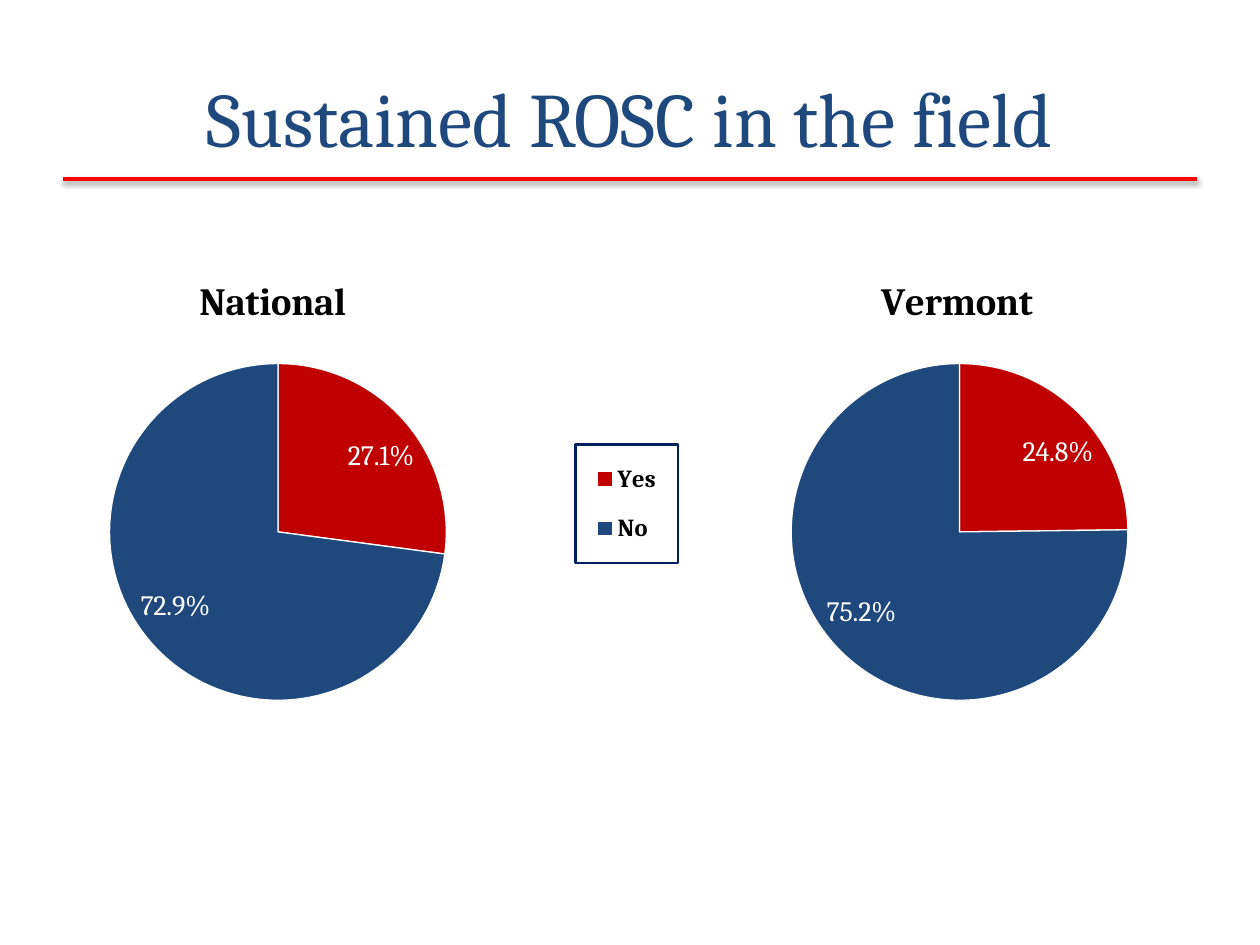
from lxml import etree
from pptx import Presentation
from pptx.chart.data import CategoryChartData
from pptx.dml.color import RGBColor
from pptx.enum.chart import (XL_CHART_TYPE, XL_LABEL_POSITION as LabelPos,
                             XL_LEGEND_POSITION as LegendPos)
from pptx.enum.shapes import MSO_CONNECTOR
from pptx.enum.text import MSO_ANCHOR, PP_ALIGN
from pptx.oxml import parse_xml
from pptx.oxml.ns import nsdecls, qn
from pptx.util import Inches, Pt

FONT = "Cambria"
NAVY, RED, WHITE, BLACK = "1F497D", "C00000", "FFFFFF", "000000"
SLICE_COLORS = (RED, NAVY)


def rgb(value):
    return RGBColor.from_string(value)


def format_font(font, size, color=BLACK, bold=False):
    font.name, font.size, font.bold = FONT, Pt(size), bold
    font.color.rgb = rgb(color)


def write_text(tf, text, size, color=BLACK, bold=False, align=PP_ALIGN.CENTER):
    p = tf.paragraphs[0]
    p.alignment = align
    r = p.add_run()
    r.text = text
    format_font(r.font, size, color, bold)


def set_layout(parent, before, x, y, w=None, h=None, inner=False):
    """Place a chart part by fractions of the chart, ahead of the named child."""
    for old in parent.findall(qn("c:layout")):
        parent.remove(old)
    layout = parse_xml(f"<c:layout {nsdecls('c')}><c:manualLayout/></c:layout>")
    manual = layout[0]
    settings = [("layoutTarget", "inner" if inner else None),
                ("xMode", "edge"), ("yMode", "edge"),
                ("x", x), ("y", y), ("w", w), ("h", h)]
    for tag, value in settings:
        if value is not None:
            etree.SubElement(manual, qn(f"c:{tag}")).set("val", str(value))
    parent.find(qn(before)).addprevious(layout)


def add_heading(slide, text, left, top, width, height):
    line_y = top + 1.12
    line = slide.shapes.add_connector(
        MSO_CONNECTOR.STRAIGHT, Inches(left), Inches(line_y),
        Inches(left + width), Inches(line_y))
    line.line.color.rgb = rgb("FF0000")
    line.line.width = Pt(2)
    line._element.spPr.append(parse_xml(
        f"<a:effectLst {nsdecls('a')}>"
        f'<a:outerShdw blurRad="{Pt(3.1)}" dist="{Pt(1.6)}" dir="5400000" rotWithShape="0">'
        '<a:srgbClr val="000000"><a:alpha val="38000"/></a:srgbClr>'
        "</a:outerShdw></a:effectLst>"))

    title = slide.shapes.title
    title.left, title.top = Inches(left), Inches(top)
    title.width, title.height = Inches(width), Inches(height)
    title.text_frame.vertical_anchor = MSO_ANCHOR.MIDDLE
    write_text(title.text_frame, text, 44, NAVY)


def add_legend(chart):
    chart.has_legend = True
    legend = chart.legend
    legend.position = LegendPos.RIGHT
    legend.include_in_layout = False
    format_font(legend.font, 14, bold=True)
    set_layout(legend._element, "c:overlay", 0.81, 0.41, 0.15, 0.19)
    legend._element.find(qn("c:txPr")).addprevious(parse_xml(
        f'<c:spPr {nsdecls("c", "a")}><a:ln w="{Pt(1.5)}"><a:solidFill>'
        '<a:srgbClr val="002060"/></a:solidFill></a:ln></c:spPr>'))


def add_pie(slide, name, categories, values, left, top, width, height, legend=False):
    data = CategoryChartData()
    data.categories = categories
    data.add_series("Series 1", values)
    chart = slide.shapes.add_chart(
        XL_CHART_TYPE.PIE, Inches(left), Inches(top),
        Inches(width), Inches(height), data).chart
    format_font(chart.font, 18)

    chart.has_title = True
    write_text(chart.chart_title.text_frame, name, 22, bold=True)
    chart.chart_title.include_in_layout = False
    set_layout(chart.chart_title._element, "c:overlay", 0.25, 0.13)

    plot = chart.plots[0]
    plot.vary_by_categories = True
    set_layout(plot._element.getparent(), "c:pieChart", 0.1, 0.28, 0.55, 0.54, inner=True)
    for i, color in enumerate(SLICE_COLORS):
        fmt = plot.series[0].points[i].format
        fmt.fill.solid()
        fmt.fill.fore_color.rgb = rgb(color)
        fmt.line.color.rgb = rgb(WHITE)
        fmt.line.width = Pt(0.75)

    labels = plot.series[0].data_labels
    labels.show_percentage, labels.show_value = True, False
    labels.number_format, labels.number_format_is_linked = "0.0%", False
    labels.position = LabelPos.BEST_FIT
    format_font(labels.font, 16, WHITE)

    chart.has_legend = False
    if legend:
        add_legend(chart)


def main():
    prs = Presentation()
    prs.slide_width, prs.slide_height = Inches(10), Inches(7.5)
    slide = prs.slides.add_slide(prs.slide_layouts[5])
    add_heading(slide, "Sustained ROSC in the field", 0.5, 0.3, 9, 1.25)
    pie_box = dict(top=1.5, width=5.43, height=4.95)
    add_pie(slide, "National", ("Yes", "No"), (27.1, 72.9), left=0.17, legend=True, **pie_box)
    add_pie(slide, "Vermont", ("1", "2"), (24.8, 75.2), left=5.58, **pie_box)
    prs.save("out.pptx")


if __name__ == "__main__":
    main()
